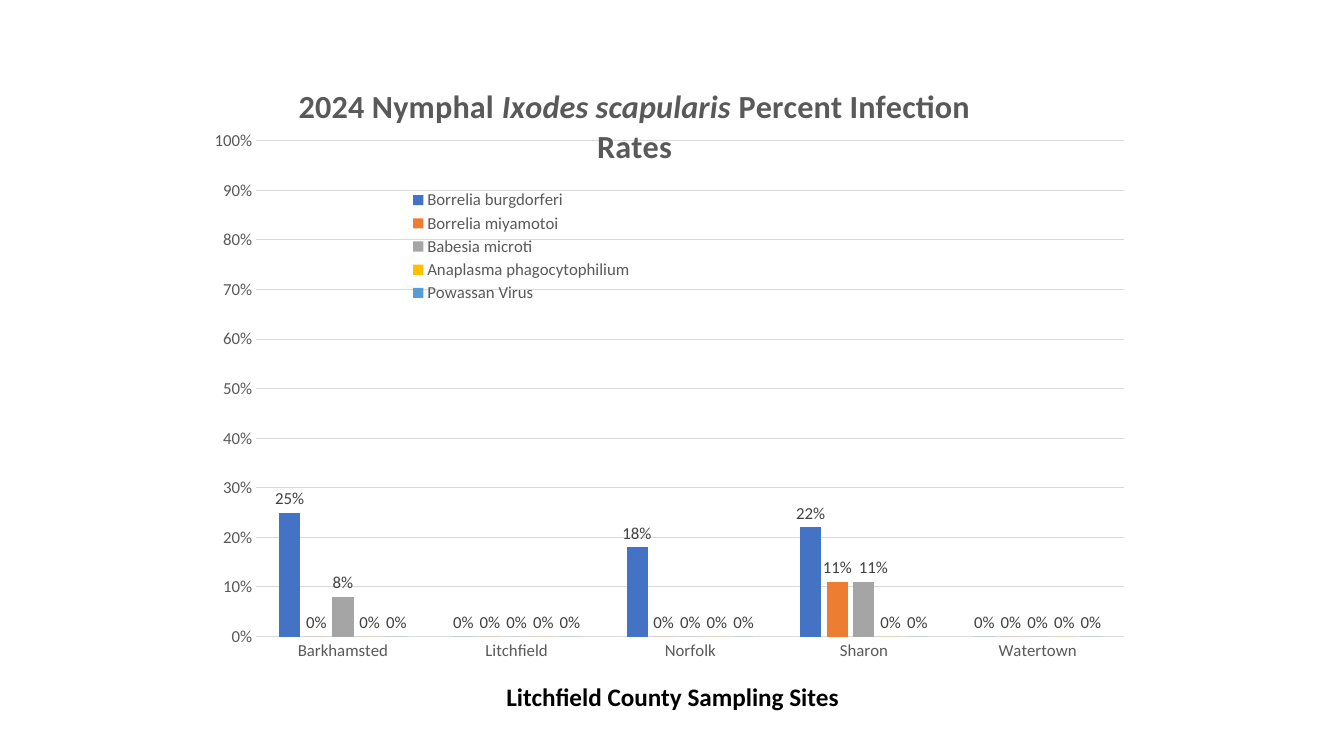
from lxml import etree
from pptx import Presentation
from pptx.chart.data import CategoryChartData as Data
from pptx.dml.color import RGBColor as RGB
from pptx.enum.chart import XL_CHART_TYPE as Kind, XL_LABEL_POSITION as Spot
from pptx.enum.chart import XL_LEGEND_POSITION as Side, XL_TICK_MARK as Tick
from pptx.enum.text import PP_ALIGN as Align
from pptx.oxml.ns import qn
from pptx.util import Inches, Pt

HUES = {"ink": "000000", "text": "595959", "label": "404040", "grid": "D9D9D9",
        "blue": "4472C4", "orange": "ED7D31", "gray": "A5A5A5",
        "gold": "FFC000", "sky": "5B9BD5"}
SITES = ["Barkhamsted", "Litchfield", "Norfolk", "Sharon", "Watertown"]
RATES = [("Borrelia burgdorferi", "blue", (0.25, 0, 0.18, 0.22, 0)),
         ("Borrelia miyamotoi", "orange", (0, 0, 0, 0.11, 0)),
         ("Babesia microti", "gray", (0.08, 0, 0, 0.11, 0)),
         ("Anaplasma phagocytophilium", "gold", (0,) * 5),
         ("Powassan Virus", "sky", (0,) * 5)]
TITLE = [("2024 Nymphal ", False), ("Ixodes scapularis", True),
         (" Percent Infection Rates", False)]


class Deck:
    """Holds the style and the current slide."""

    def __init__(self, wide, high):
        self.file = Presentation()
        self.wide, self.high = Inches(wide), Inches(high)
        self.file.slide_width, self.file.slide_height = self.wide, self.high
        self.slide = self.file.slides.add_slide(self.file.slide_layouts[6])

    def hue(self, name):
        return RGB.from_string(HUES[name])

    def box(self, left, top, wide, high):
        return [int(share * full) for share, full in
                zip((left, top, wide, high), (self.wide, self.high) * 2)]

    def style(self, font, size, hue, **more):
        for key, value in {"name": "Calibri", "size": Pt(size), **more}.items():
            setattr(font, key, value)
        font.color.rgb = self.hue(hue)

    def rule(self, line):
        line.color.rgb = self.hue("grid")
        line.width = Pt(0.75)

    def place(self, node, index, **parts):
        for old in node.findall(qn("c:layout")):
            node.remove(old)
        layout = etree.Element(qn("c:layout"))
        manual = etree.SubElement(layout, qn("c:manualLayout"))
        for key, value in parts.items():
            etree.SubElement(manual, qn("c:" + key)).set("val", str(value))
        node.insert(index, layout)

    def text(self, words, area):
        frame = self.slide.shapes.add_textbox(*self.box(*area)).text_frame
        frame.word_wrap = False
        para = frame.paragraphs[0]
        para.alignment = Align.CENTER
        run = para.add_run()
        run.text = words
        self.style(run.font, 18, "ink", bold=True)

    def chart(self, area):
        data = Data(number_format="0%")
        data.categories = SITES
        for name, _, rates in RATES:
            data.add_series(name, rates)
        chart = self.slide.shapes.add_chart(
            Kind.COLUMN_CLUSTERED, *self.box(*area), data).chart
        self.style(chart.font, 10, "ink")
        self.title(chart)
        self.axes(chart)
        self.bars(chart.plots[0])
        self.legend(chart)
        self.place(chart.plots[0]._element.getparent(), 0, layoutTarget="inner",
                   xMode="edge", yMode="edge", x=0.058, y=0.103, w=0.923, h=0.83)

    def title(self, chart):
        title = chart.chart_title
        para = title.text_frame.paragraphs[0]
        for words, slant in TITLE:
            run = para.add_run()
            run.text = words
            self.style(run.font, 23, "text", bold=True, italic=slant)
        self.place(title._element, 1, xMode="edge", yMode="edge", x=0.1, y=0.005)

    def axes(self, chart):
        sites, rates = chart.category_axis, chart.value_axis
        for axis in (sites, rates):
            axis.major_tick_mark = axis.minor_tick_mark = Tick.NONE
            self.style(axis.tick_labels.font, 12, "text")
        self.rule(sites.format.line)
        scale = {"minimum_scale": 0, "maximum_scale": 1, "major_unit": 0.1,
                 "has_major_gridlines": True}
        for key, value in scale.items():
            setattr(rates, key, value)
        rates.format.line.fill.background()
        self.rule(rates.major_gridlines.format.line)
        rates.tick_labels.number_format = "0%"
        rates.tick_labels.number_format_is_linked = False

    def bars(self, plot):
        for key, value in {"gap_width": 219, "overlap": -27,
                           "vary_by_categories": False}.items():
            setattr(plot, key, value)
        looks = {"show_value": True, "number_format": "0%",
                 "number_format_is_linked": False, "position": Spot.OUTSIDE_END}
        for bar, (_, hue, _) in zip(plot.series, RATES):
            bar.format.fill.solid()
            bar.format.fill.fore_color.rgb = self.hue(hue)
            for key, value in looks.items():
                setattr(bar.data_labels, key, value)
            self.style(bar.data_labels.font, 12, "label")
        babesia = plot.series[2]
        label = babesia.points[SITES.index("Sharon")].data_label
        label.position = Spot.OUTSIDE_END
        self.style(label.font, 12, "label")
        self.place(babesia._element.find(".//" + qn("c:dLbl")), 1, x=0.01, y=0)

    def legend(self, chart):
        chart.has_legend = True
        legend = chart.legend
        legend.position = Side.RIGHT
        legend.include_in_layout = False
        self.style(legend.font, 12, "text")
        self.place(legend._element, 1, xMode="edge", yMode="edge",
                   x=0.215, y=0.18, w=0.25, h=0.2)


def main():
    deck = Deck(13.33, 7.5)
    deck.chart((0.15, 0.105, 0.7, 0.79))
    deck.text("Litchfield County Sampling Sites", (0.368, 0.895, 0.265, 0.053))
    deck.file.save("out.pptx")


if __name__ == "__main__":
    main()
